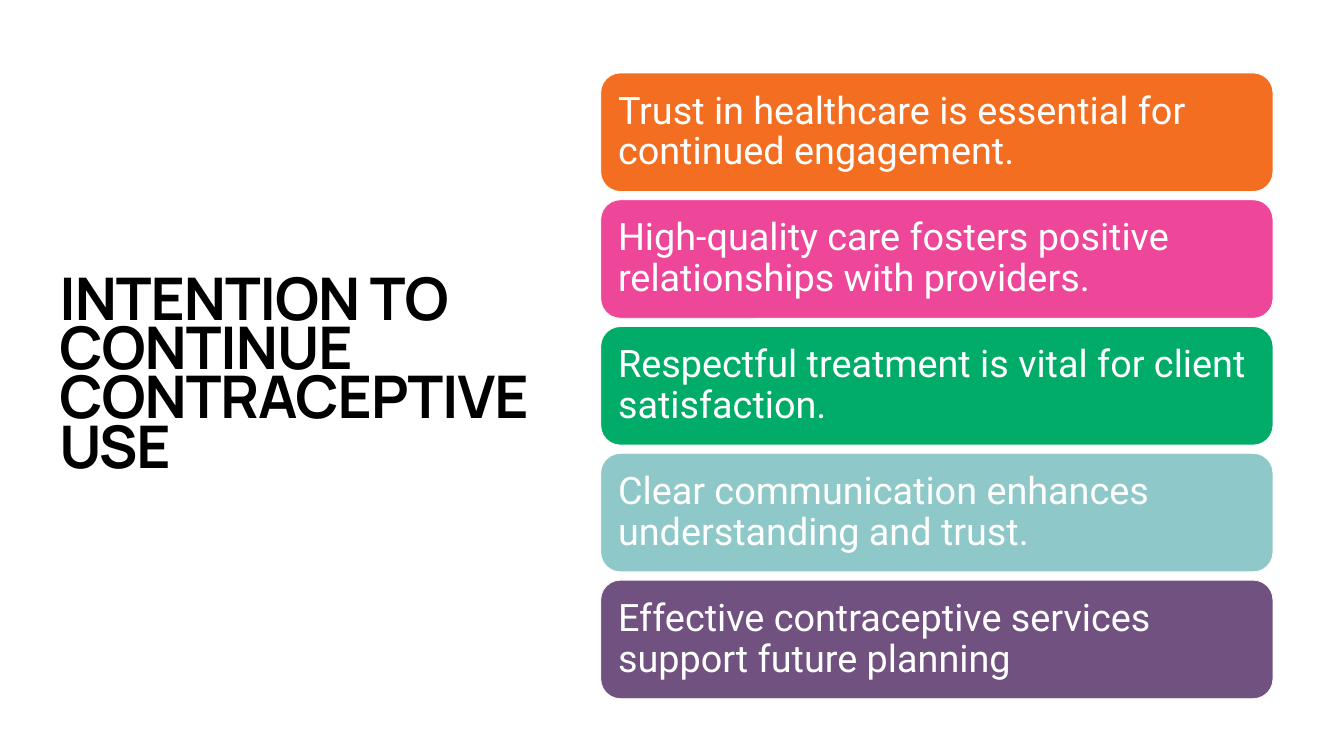
"""Build the slide on the intention to continue contraceptive use."""
import pptx
import pptx.dml.color
import pptx.enum.shapes
import pptx.enum.text
import pptx.util

Cm = pptx.util.Cm
Pt = pptx.util.Pt
RGBColor = pptx.dml.color.RGBColor

BLACK = RGBColor(0x00, 0x00, 0x00)
WHITE = RGBColor(0xFF, 0xFF, 0xFF)
ORANGE = RGBColor(0xF3, 0x6E, 0x20)
PINK = RGBColor(0xEE, 0x47, 0x99)
GREEN = RGBColor(0x00, 0xAC, 0x68)
TEAL = RGBColor(0x8E, 0xC8, 0xC8)
PURPLE = RGBColor(0x70, 0x51, 0x7F)

MESSAGES = [
    ("Trust in healthcare is essential for continued engagement.", ORANGE),
    ("High-quality care fosters positive relationships with providers.", PINK),
    ("Respectful treatment is vital for client satisfaction.", GREEN),
    ("Clear communication enhances understanding and trust.", TEAL),
    ("Effective contraceptive services support future planning", PURPLE),
]
CARD_LEFT, CARD_TOP, CARD_WIDTH, CARD_HEIGHT = 30.28, 3.68, 33.88, 5.97
CARD_PITCH = 6.39


class SlideBuilder:
    heading_font = "Manrope"
    body_font = "Roboto"

    def __init__(self, slide):
        self.slide = slide

    def fill_text(self, frame, text, insets, line_spacing):
        frame.word_wrap = True
        frame.vertical_anchor = pptx.enum.text.MSO_ANCHOR.MIDDLE
        frame.margin_left, frame.margin_top, frame.margin_right, frame.margin_bottom = map(Cm, insets)
        paragraph = frame.paragraphs[0]
        paragraph.alignment = pptx.enum.text.PP_ALIGN.LEFT
        paragraph.line_spacing = line_spacing
        paragraph.add_run().text = text
        return paragraph

    def title(self, text, left, top, width, height):
        box = self.slide.shapes.add_textbox(Cm(left), Cm(top), Cm(width), Cm(height))
        heading = self.fill_text(box.text_frame, text, (0.25, 0.25, 0.25, 0.13), 0.7)
        heading.font.name = self.heading_font
        heading.font.size = Pt(84)
        heading.font.bold = True
        heading.font.color.rgb = BLACK
        heading.runs[0]._r.get_or_add_rPr().set("spc", "-150")

    def card(self, text, color, top):
        card = self.slide.shapes.add_shape(
            pptx.enum.shapes.MSO_SHAPE.ROUNDED_RECTANGLE,
            Cm(CARD_LEFT), Cm(top), Cm(CARD_WIDTH), Cm(CARD_HEIGHT))
        card.shadow.inherit = False
        card.fill.solid()
        card.fill.fore_color.rgb = color
        card.line.color.rgb = WHITE
        card.line.width = Pt(1)
        message = self.fill_text(card.text_frame, text, (0.58,) * 4, 0.9)
        message.font.name = self.body_font
        message.font.size = Pt(54)
        message.font.color.rgb = WHITE


def main():
    presentation = pptx.Presentation()
    presentation.slide_width = Cm(67.74)
    presentation.slide_height = Cm(38.1)
    builder = SlideBuilder(presentation.slides.add_slide(presentation.slide_layouts[6]))
    builder.title("INTENTION TO CONTINUE CONTRACEPTIVE USE", 2.74, 3.56, 24.61, 31.01)
    for row, (text, color) in enumerate(MESSAGES):
        builder.card(text, color, CARD_TOP + row * CARD_PITCH)
    presentation.save("out.pptx")


if __name__ == "__main__":
    main()
